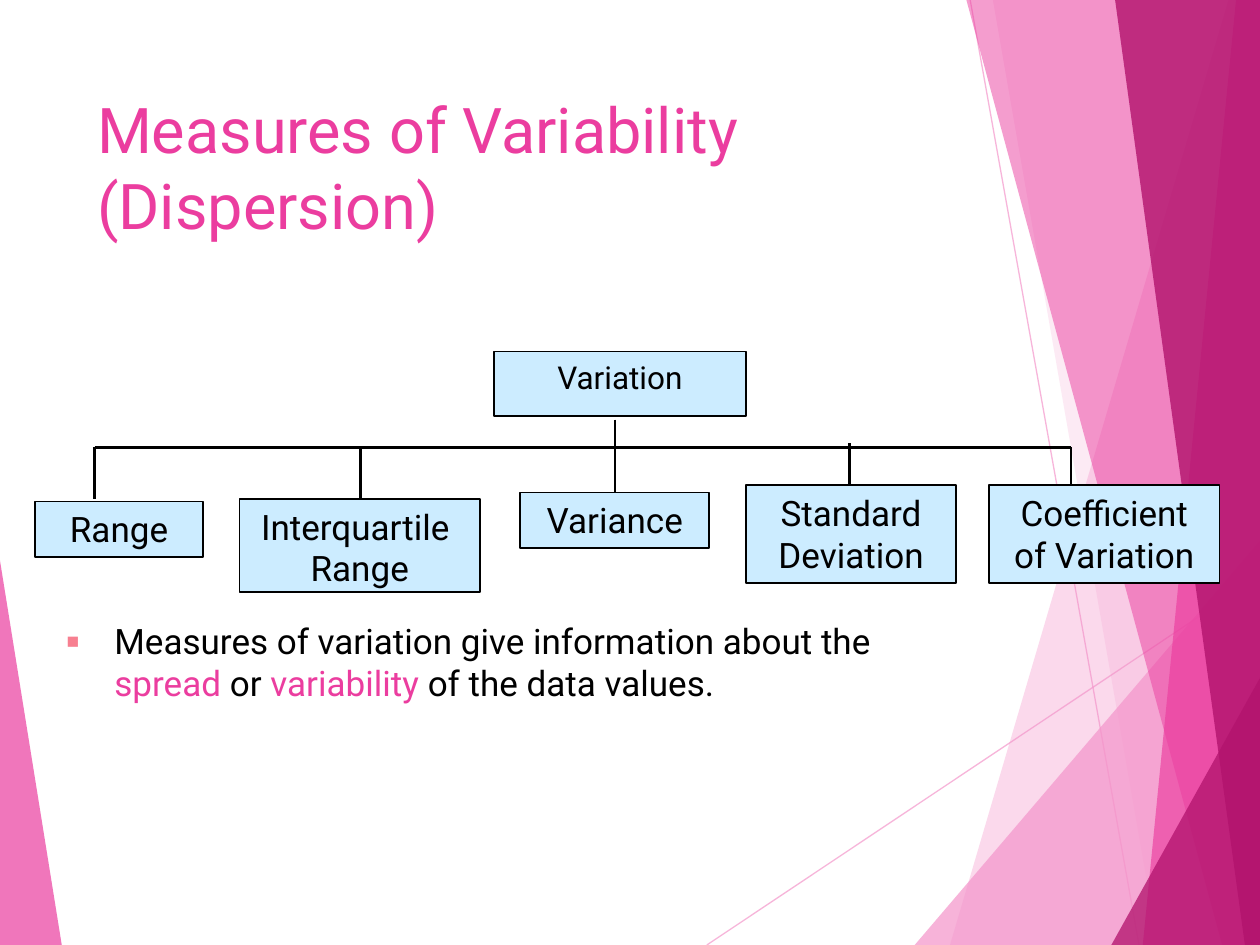
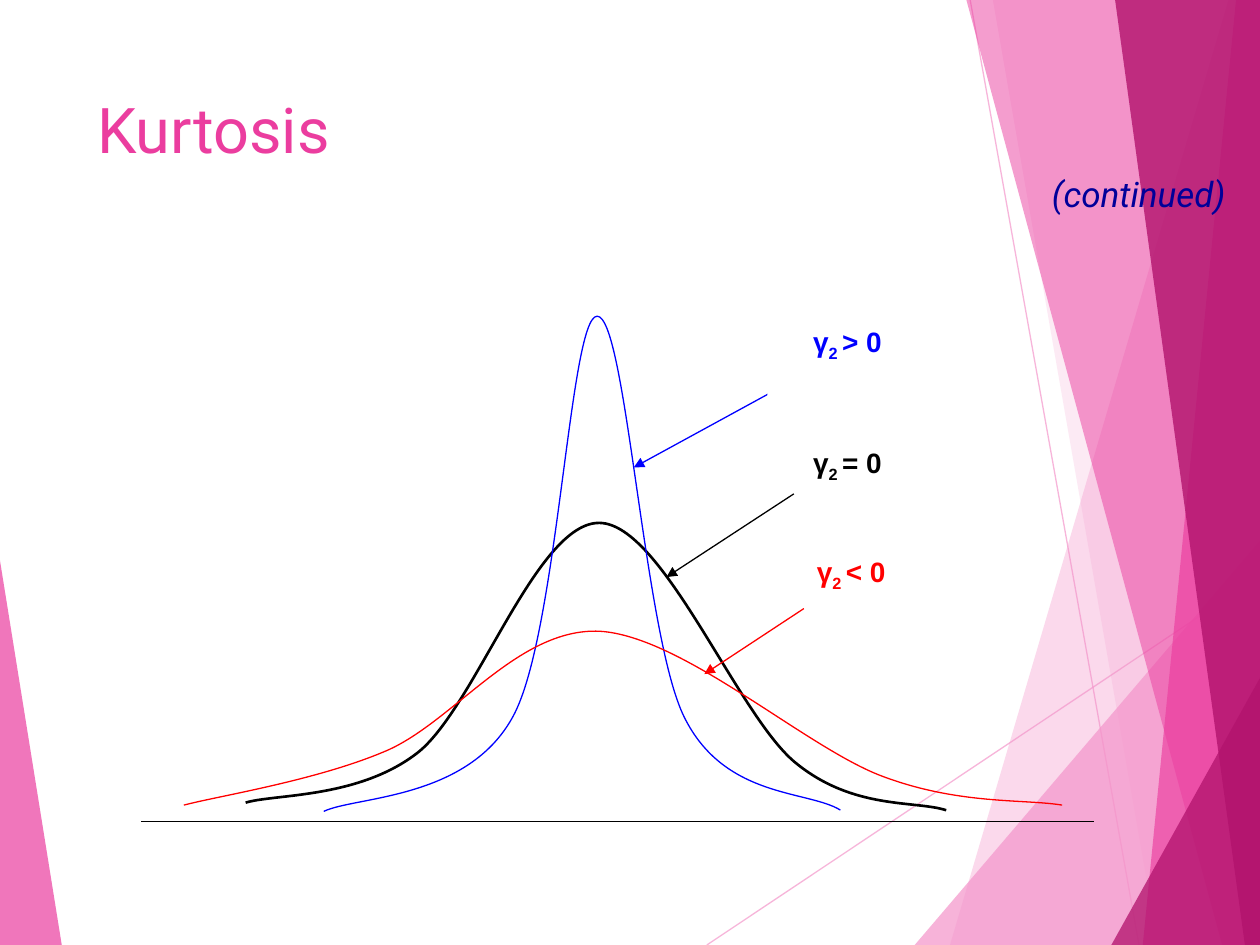
from dataclasses import dataclass
from lxml import etree
from pptx import Presentation
from pptx.dml.color import RGBColor
from pptx.enum.shapes import MSO_CONNECTOR, MSO_SHAPE
from pptx.enum.text import MSO_ANCHOR, MSO_AUTO_SIZE, PP_ALIGN
from pptx.oxml.ns import qn
from pptx.util import Inches, Pt

LINE, RECT = MSO_CONNECTOR.STRAIGHT, MSO_SHAPE.RECTANGLE
TOP, FIXED = MSO_ANCHOR.TOP, MSO_AUTO_SIZE.NONE
LEFT, CENTER = PP_ALIGN.LEFT, PP_ALIGN.CENTER

PINK, PALE, PLUM = "EB3D9F", "F496CB", "B2136D"
BLACK, WHITE, BLUE, RED, NAVY = "000000", "FFFFFF", "0000FF", "FF0000", "000099"
SKY, CORAL = "CCECFF", "F77F90"
FONT, MATH = "Roboto", "Arial"

Point = tuple[float, float]


@dataclass
class Band:
    points: list[Point]
    color: str
    alpha: int


@dataclass
class Stroke:
    start: Point
    end: Point
    color: str = BLACK
    width: float = 1.5
    alpha: int = 100
    arrow: bool = False


@dataclass
class Run:
    text: str
    size: int = 20
    color: str = BLACK
    font: str = FONT
    bold: bool = False
    slant: bool = False
    base: int = 0


@dataclass
class Node:
    left: float
    top: float
    width: float
    height: float
    lines: list[str]
    size: int = 20


@dataclass
class Curve:
    points: list[Point]     # start, then two handles and an end per arc
    color: str
    width: float


@dataclass
class Label:
    left: float
    top: float
    sign: str
    color: str


BANDS = [
    Band([(9.75, 0), (7.54, 7.5), (10, 7.5), (10, 0)], PALE, 36),
    Band([(7.88, 0), (9.19, 7.5), (10, 7.5), (10, 0)], PALE, 20),
    Band([(7.26, 7.5), (10, 4.29), (10, 7.5)], PALE, 72),
    Band([(7.67, 0), (9.7, 7.5), (10, 7.5), (10, 0)], PINK, 50),
    Band([(9.81, 0), (9.07, 7.5), (10, 7.5), (10, 0)], PINK, 66),
    Band([(8.85, 0), (9.88, 7.5), (10, 7.5), (10, 0)], PLUM, 80),
    Band([(8.82, 7.5), (10, 5.38), (10, 7.5)], PLUM, 76),
    Band([(0, 4.45), (0.49, 7.5), (0, 7.5)], PINK, 70),
]
RAYS = [Stroke((5.61, 7.5), (10, 4.57), PALE, 0.75, 70),
        Stroke((7.7, 0), (9.04, 7.5), PALE, 0.75, 70)]

RAIL = 3.55
DROPS = [(6.74, 3.52, 3.85), (2.86, RAIL, 3.99), (4.88, 3.33, 3.91),
         (8.5, RAIL, 4.04), (0.75, RAIL, 3.96)]     # x, top, foot
NODES = [
    Node(3.92, 2.79, 2, 0.51, ["Variation"], 18),
    Node(4.13, 3.91, 1.5, 0.44, ["Variance"]),
    Node(5.92, 3.85, 1.67, 0.78, ["Standard Deviation"]),
    Node(7.85, 3.85, 1.83, 0.78, ["Coefficient of Variation"]),
    Node(0.28, 3.98, 1.33, 0.44, ["Range"]),
    Node(1.9, 3.96, 1.91, 0.74, ["Interquartile ", "Range"]),
]

CURVES = [
    Curve([(1.95, 6.37), (2.18, 6.3), (2.85, 6.34), (3.32, 5.97),
           (3.78, 5.6), (4.26, 4.14), (4.76, 4.15),
           (5.26, 4.16), (5.85, 5.67), (6.31, 6.05),
           (6.77, 6.43), (7.26, 6.35), (7.51, 6.43)], BLACK, 1.5),
    Curve([(2.57, 6.44), (2.82, 6.32), (3.71, 6.35), (4.07, 5.69),
           (4.43, 5.04), (4.52, 2.51), (4.74, 2.51),
           (4.97, 2.51), (5.11, 5.04), (5.43, 5.69),
           (5.75, 6.34), (6.41, 6.27), (6.67, 6.43)], BLUE, 0.75),
    Curve([(1.46, 6.39), (1.72, 6.32), (2.49, 6.2), (3.04, 5.97),
           (3.59, 5.75), (4.1, 4.98), (4.76, 5.01),
           (5.42, 5.05), (6.39, 5.93), (7, 6.16),
           (7.61, 6.39), (8.13, 6.34), (8.43, 6.39)], RED, 0.75),
]
LABELS = [Label(6.09, 2.53, ">", BLUE), Label(6.09, 3.49, "=", BLACK),
          Label(6.12, 4.35, "<", RED)]
ARROWS = [Stroke((6.33, 3), (5.03, 3.71), BLUE, 0.75, arrow=True),
          Stroke((6.3, 3.92), (5.29, 4.58), BLACK, 0.75, arrow=True),
          Stroke((6.38, 4.83), (5.59, 5.35), RED, 0.75, arrow=True)]


# Helpers
def paint(fill, color: str, alpha: int = 100) -> None:
    fill.solid()
    fill.fore_color.rgb = RGBColor.from_string(color)
    if alpha < 100:
        tone = fill._xPr.find(qn("a:solidFill"))[0]
        etree.SubElement(tone, qn("a:alpha"), val=str(alpha * 1000))


def place(shape, left: float, top: float, width: float, height: float) -> None:
    shape.left, shape.top = Inches(left), Inches(top)
    shape.width, shape.height = Inches(width), Inches(height)


def write(para, runs: list[Run], align=LEFT) -> None:
    para.alignment = align
    for item in runs:
        run = para.add_run()
        run.text = item.text
        font = run.font
        font.name, font.size = item.font, Pt(item.size)
        font.bold, font.italic = item.bold, item.slant
        paint(font.fill, item.color)
        if item.base:
            run._r.get_or_add_rPr().set("baseline", str(item.base * 1000))


def draw_line(slide, item: Stroke):
    ends = [Inches(n) for n in item.start + item.end]
    line = slide.shapes.add_connector(LINE, *ends)
    line.line.width = Pt(item.width)
    paint(line.line.fill, item.color, item.alpha)
    if item.arrow:
        etree.SubElement(line.line._get_or_add_ln(), qn("a:tailEnd"), type="triangle")
    etree.SubElement(line._element.spPr, qn("a:effectLst"))
    return line


def draw_path(slide, points: list[Point], close: bool):
    spots = [(Inches(x), Inches(y)) for x, y in points]
    pen = slide.shapes.build_freeform(*spots[0], scale=1.0)
    pen.add_line_segments(spots[1:], close=close)
    shape = pen.convert_to_shape()
    shape.shadow.inherit = False
    return shape


def draw_band(slide, band: Band):
    shape = draw_path(slide, band.points, True)
    paint(shape.fill, band.color, band.alpha)
    shape.line.fill.background()
    return shape


def draw_curve(slide, curve: Curve) -> None:
    shape = draw_path(slide, curve.points, False)
    shape.fill.background()
    shape.line.width = Pt(curve.width)
    paint(shape.line.fill, curve.color)
    # Turn each three straight steps into one cubic arc
    steps = list(shape._element.iter(qn("a:lnTo")))
    for first, *rest in zip(steps[::3], steps[1::3], steps[2::3]):
        first.tag = qn("a:cubicBezTo")
        for step in rest:
            first.append(step[0])
            step.getparent().remove(step)


def draw_box(slide, left: float, top: float, width: float, height: float, fill: str):
    shape = slide.shapes.add_shape(RECT, 0, 0, 0, 0)
    place(shape, left, top, width, height)
    shape.shadow.inherit = False
    paint(shape.fill, fill)
    shape.line.fill.background()
    shape.text_frame.word_wrap = True
    shape.text_frame.vertical_anchor = TOP
    return shape


def draw_node(slide, node: Node) -> None:
    shape = draw_box(slide, node.left, node.top, node.width, node.height, SKY)
    paint(shape.line.fill, BLACK)
    shape.line.width = Pt(1)
    frame = shape.text_frame
    for i, text in enumerate(node.lines):
        para = frame.add_paragraph() if i else frame.paragraphs[0]
        write(para, [Run(text, node.size)], CENTER)
        if i:
            para.line_spacing, para.space_before = 0.4, Pt(12)


def draw_label(slide, label: Label) -> None:
    shape = draw_box(slide, label.left, label.top, 1.27, 0.66, WHITE)
    parts = [("γ", 0), ("2 ", -25), (f"{label.sign} 0", 0)]
    runs = [Run(text, 16, label.color, MATH, True, base=base) for text, base in parts]
    write(shape.text_frame.paragraphs[0], runs, CENTER)


def add_text(slide, left: float, top: float, width: float, height: float, runs: list[Run]):
    box = slide.shapes.add_textbox(0, 0, 0, 0)
    place(box, left, top, width, height)
    box.text_frame.word_wrap = True
    para = box.text_frame.paragraphs[0]
    write(para, runs)
    return para


def add_bullet(para) -> None:
    props = para._p.get_or_add_pPr()
    props.set("marL", str(Inches(0.38)))
    props.set("indent", str(-Inches(0.38)))
    tint = etree.SubElement(props, qn("a:buClr"))
    etree.SubElement(tint, qn("a:srgbClr"), val=CORAL)
    etree.SubElement(props, qn("a:buSzPct"), val="60000")
    etree.SubElement(props, qn("a:buFont"), typeface=MATH)
    etree.SubElement(props, qn("a:buChar"), char="■")


def add_slide(deck, title: str):
    slide = deck.slides.add_slide(deck.slide_layouts[5])
    head = slide.shapes.title
    place(head, 0.67, 0.67, 6.94, 1.44)
    frame = head.text_frame
    frame.word_wrap, frame.vertical_anchor = True, TOP
    frame.auto_size = FIXED
    write(frame.paragraphs[0], [Run(title, 36, PINK)])
    return slide


def dress_layout(slide) -> None:
    """Draw the bands, then move them to the layout all slides share."""
    parts = [draw_line(slide, ray) for ray in RAYS]
    parts += [draw_band(slide, band) for band in BANDS]
    tree = slide.slide_layout.shapes._spTree
    for i, part in enumerate(parts, 100):
        next(part._element.iter(qn("p:cNvPr"))).set("id", str(i))
        tree.append(part._element)


# Slides
def show_spread(deck) -> None:
    slide = add_slide(deck, "Measures of Variability (Dispersion)")
    dress_layout(slide)
    draw_line(slide, Stroke((0.75, RAIL), (8.5, RAIL)))
    for x, top, foot in DROPS:
        draw_line(slide, Stroke((x, top), (x, foot)))
    for node in NODES:
        draw_node(slide, node)
    para = add_text(slide, 0.43, 4.87, 7.17, 1.92, [
        Run("Measures of variation give information about the "),
        Run("spread ", color=PINK), Run("or "),
        Run("variability", color=PINK), Run(" of the data values.")])
    add_bullet(para)


def show_peaks(deck) -> None:
    slide = add_slide(deck, "Kurtosis")
    draw_line(slide, Stroke((1.12, 6.52), (8.68, 6.52), width=0.75))
    for curve in CURVES:
        draw_curve(slide, curve)
    # The first label covers the start of its arrow
    draw_line(slide, ARROWS[0])
    for label in LABELS:
        draw_label(slide, label)
    for arrow in ARROWS[1:]:
        draw_line(slide, arrow)
    add_text(slide, 8.25, 1.32, 1.75, 0.43, [Run("(continued)", color=NAVY, slant=True)])


def main() -> None:
    deck = Presentation()
    deck.slide_width, deck.slide_height = Inches(10), Inches(7.5)
    show_spread(deck)
    show_peaks(deck)
    deck.save("out.pptx")


if __name__ == "__main__":
    main()
